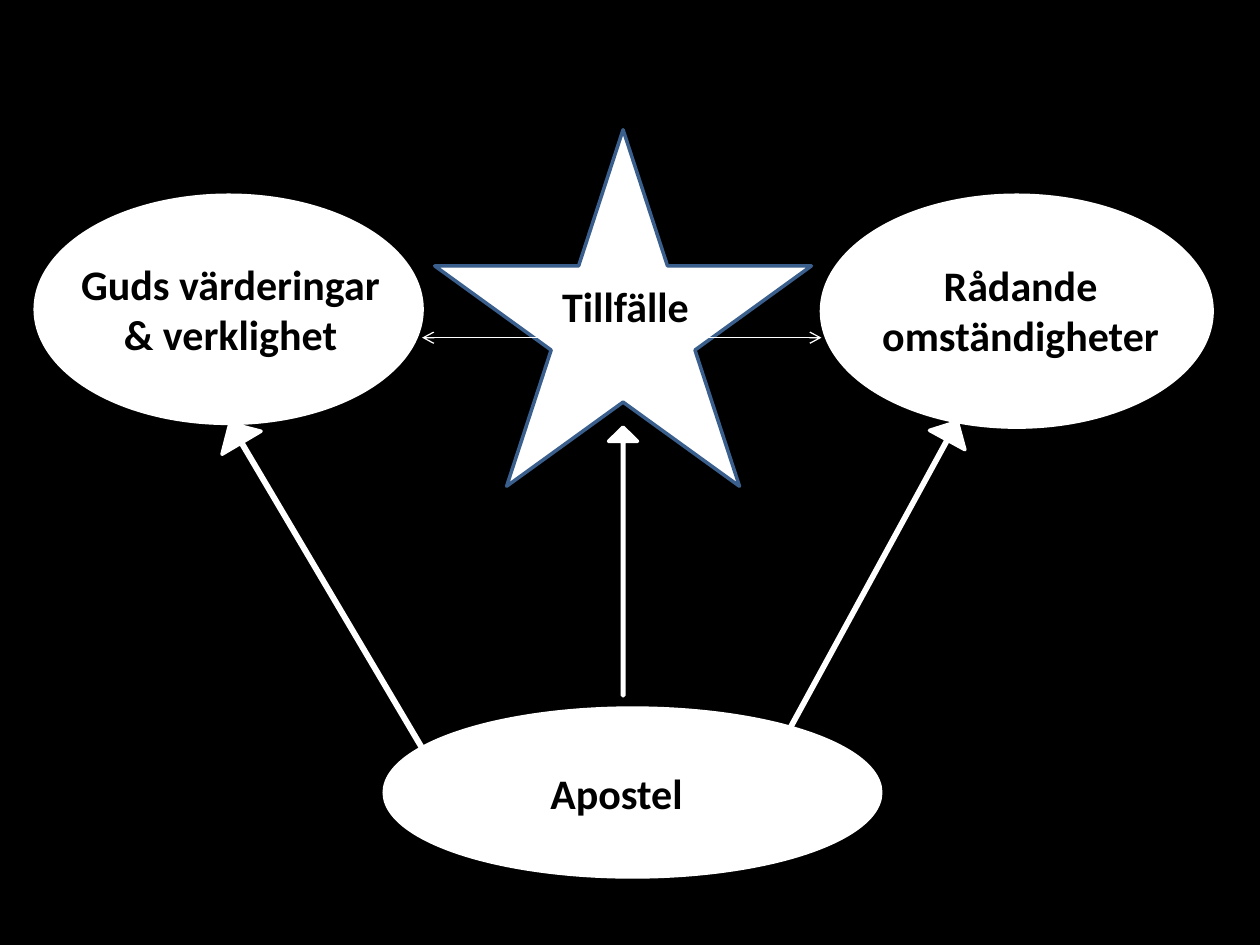
from dataclasses import dataclass

from lxml.etree import SubElement
from pptx import Presentation
from pptx.dml.color import RGBColor as Rgb
from pptx.enum.shapes import MSO_CONNECTOR as Link, MSO_SHAPE as Form
from pptx.enum.text import MSO_AUTO_SIZE as Fit, PP_ALIGN as Align
from pptx.oxml.ns import qn
from pptx.util import Emu, Pt

SCALE = 9144  # EMU per px, 100 px to the inch


@dataclass(frozen=True)
class Theme:
    back: Rgb = Rgb(0, 0, 0)
    fill: Rgb = Rgb(255, 255, 255)
    text: Rgb = Rgb(0, 0, 0)
    edge: Rgb = Rgb(0x3A, 0x5F, 0x8C)
    font: str = "Calibri"
    size: Pt = Pt(24)
    thick: Pt = Pt(2)
    thin: Pt = Pt(0.75)


@dataclass(frozen=True)
class Box:
    left: int
    top: int
    wide: int
    high: int

    def emu(self) -> list[Emu]:
        return [px(n) for n in (self.left, self.top, self.wide, self.high)]


@dataclass(frozen=True)
class Figure:
    form: Form
    box: Box
    line: Rgb
    turn: float = 0
    shape: tuple[float, ...] = ()


@dataclass(frozen=True)
class Label:
    text: str
    box: Box
    align: Align = Align.CENTER


@dataclass(frozen=True)
class Ray:
    start: int
    end: int
    level: int


def px(n: int) -> Emu:
    return Emu(n * SCALE)


THEME = Theme()


def oval(box: Box) -> Figure:
    return Figure(Form.OVAL, box, THEME.fill)


def arrow(box: Box, turn: float, head: float) -> Figure:
    return Figure(Form.DOWN_ARROW, box, THEME.fill, turn, (0.053, head))


# Ovals, block arrows and star, from back to front
FIGURES = [
    oval(Box(305, 562, 394, 134)),
    oval(Box(28, 155, 307, 181)),
    oval(Box(652, 155, 310, 184)),
    arrow(Box(483, 339, 23, 213), 180, 0.488),
    arrow(Box(263, 309, 36, 387), 149.4, 0.5),
    arrow(Box(659, 313, 32, 354), 208.6, 0.521),
    Figure(Form.STAR_5_POINT, Box(345, 103, 299, 283), THEME.edge),
]

LABELS = [
    Label("Apostel", Box(427, 604, 150, 50), Align.LEFT),
    Label("Guds värderingar & verklighet", Box(53, 200, 260, 91)),
    Label("Rådande omständigheter", Box(676, 201, 268, 91)),
    Label("Tillfälle", Box(390, 218, 213, 50)),
]

RAYS = [Ray(555, 652, 268), Ray(427, 335, 268)]


def draw_figure(slide, item: Figure) -> None:
    shape = slide.shapes.add_shape(item.form, *item.box.emu())
    shape.shadow.inherit = False
    shape.rotation = item.turn
    for i, value in enumerate(item.shape):
        shape.adjustments[i] = value
    shape.fill.solid()
    shape.fill.fore_color.rgb = THEME.fill
    shape.line.color.rgb = item.line
    shape.line.width = THEME.thick


def draw_label(slide, item: Label) -> None:
    frame = slide.shapes.add_textbox(*item.box.emu()).text_frame
    frame.word_wrap = True
    frame.auto_size = Fit.SHAPE_TO_FIT_TEXT
    frame.text = item.text
    para = frame.paragraphs[0]
    para.alignment = item.align
    font = para.runs[0].font
    font.name, font.size, font.bold = THEME.font, THEME.size, True
    font.color.rgb = THEME.text


def draw_ray(slide, item: Ray) -> None:
    level = px(item.level)
    ray = slide.shapes.add_connector(
        Link.STRAIGHT, px(item.start), level, px(item.end), level)
    ray.line.color.rgb = THEME.fill
    ray.line.width = THEME.thin
    props = ray._element.spPr
    SubElement(props.find(qn("a:ln")), qn("a:tailEnd"), type="arrow")
    SubElement(props, qn("a:effectLst"))


def main() -> None:
    deck = Presentation()
    deck.slide_width, deck.slide_height = px(1000), px(750)
    slide = deck.slides.add_slide(deck.slide_layouts[6])
    slide.background.fill.solid()
    slide.background.fill.fore_color.rgb = THEME.back

    for item in FIGURES:
        draw_figure(slide, item)
    for item in LABELS:
        draw_label(slide, item)
    for item in RAYS:
        draw_ray(slide, item)
    deck.save("out.pptx")


if __name__ == "__main__":
    main()
